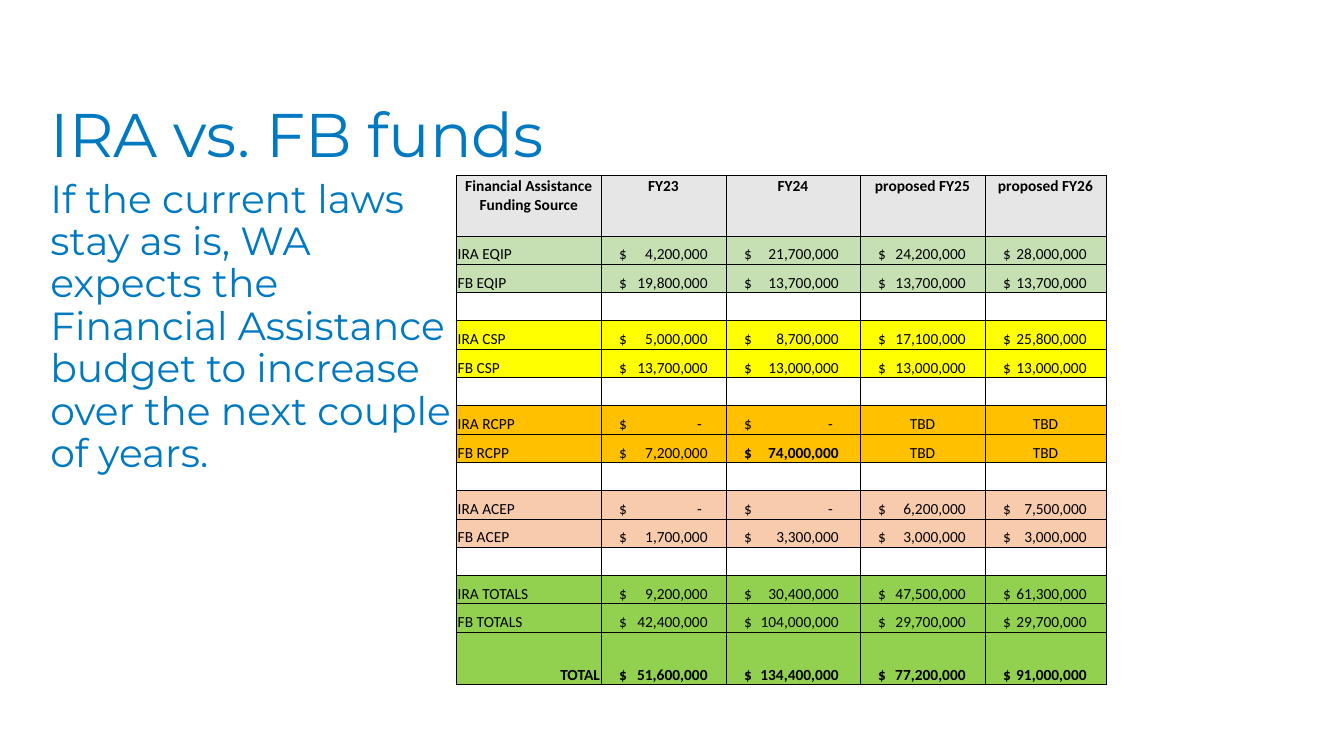
from lxml.etree import SubElement
from pptx import Presentation
from pptx.dml.color import RGBColor
from pptx.enum.text import MSO_ANCHOR as Anchor, MSO_AUTO_SIZE as AutoSize, PP_ALIGN as Align
from pptx.oxml.ns import qn
from pptx.util import Inches, Pt

COLORS = {
    "heading": "0079C1", "ink": "000000", "header": "E7E6E6", "EQIP": "C6E0B4",
    "CSP": "FFFF00", "RCPP": "FFC000", "ACEP": "F8CBAD", "TOTALS": "92D050",
}
YEARS = ["FY23", "FY24", "proposed FY25", "proposed FY26"]
PROGRAMS = {
    "EQIP": ([4_200_000, 21_700_000, 24_200_000, 28_000_000],
             [19_800_000, 13_700_000, 13_700_000, 13_700_000]),
    "CSP": ([5_000_000, 8_700_000, 17_100_000, 25_800_000],
            [13_700_000, 13_000_000, 13_000_000, 13_000_000]),
    "RCPP": ([0, 0, "TBD", "TBD"], [7_200_000, 74_000_000, "TBD", "TBD"]),
    "ACEP": ([0, 0, 6_200_000, 7_500_000], [1_700_000, 3_300_000, 3_000_000, 3_000_000]),
    "TOTALS": ([9_200_000, 30_400_000, 47_500_000, 61_300_000],
               [42_400_000, 104_000_000, 29_700_000, 29_700_000]),
}
GRAND_TOTAL = [51_600_000, 134_400_000, 77_200_000, 91_000_000]
COLUMN_WIDTHS = [1.43, 1.24, 1.33, 1.24, 1.2]
AMOUNT_WIDTHS = [0.88, 0.94, 0.87, 0.83]
TABLE_HEIGHT, HEADER_HEIGHT, TOTAL_HEIGHT = 5.05, 0.6, 0.52


class FundingSlide:
    heading_font = "Montserrat"
    table_font = "Calibri"
    table_size = 11

    def __init__(self, deck):
        self.slide = deck.slides.add_slide(deck.slide_layouts[1])

    def set_font(self, paragraph, face, size, color, bold=False):
        font = paragraph.font
        font.name, font.size, font.bold = face, Pt(size), bold
        font.color.rgb = RGBColor.from_string(COLORS[color])

    def heading(self, index, words, box, size):
        holder = self.slide.placeholders[index]
        holder.left, holder.top, holder.width, holder.height = map(Inches, box)
        frame = holder.text_frame
        frame.text = words
        frame.word_wrap = True
        frame.auto_size = AutoSize.NONE
        frame.vertical_anchor = Anchor.TOP
        paragraph = frame.paragraphs[0]
        paragraph.alignment = Align.LEFT
        paragraph.line_spacing = 0.9
        paragraph.space_before = Pt(0)
        properties = paragraph._p.get_or_add_pPr()
        properties.set("marL", "0")
        properties.set("indent", "0")
        SubElement(properties, qn("a:buNone"))
        self.set_font(paragraph, self.heading_font, size, "heading")

    def table(self, left, top, widths, heights):
        frame = self.slide.shapes.add_table(
            len(heights), len(widths), Inches(left), Inches(top),
            Inches(sum(widths)), Inches(sum(heights)))
        grid = frame.table
        grid.first_row = grid.horz_banding = False
        for column, width in zip(grid.columns, widths):
            column.width = Inches(width)
        for row, height in zip(grid.rows, heights):
            row.height = Inches(height)
        for cell in grid.iter_cells():
            self.blank(cell)
        return grid

    def blank(self, cell):
        cell.margin_left = cell.margin_right = cell.margin_top = Inches(0.01)
        cell.margin_bottom = 0
        for side in ("lnL", "lnR", "lnT", "lnB"):
            border = SubElement(cell._tc.get_or_add_tcPr(), qn(f"a:{side}"), w=str(Pt(0.5)))
            SubElement(SubElement(border, qn("a:solidFill")), qn("a:srgbClr"), val=COLORS["ink"])
        cell.fill.background()
        SubElement(cell.text_frame.paragraphs[0]._p, qn("a:endParaRPr"),
                   sz=str(self.table_size * 100))

    def label(self, cell, words, fill, align=Align.LEFT, bold=False, anchor=Anchor.BOTTOM):
        cell.fill.solid()
        cell.fill.fore_color.rgb = RGBColor.from_string(COLORS[fill])
        cell.vertical_anchor = anchor
        paragraph = cell.text_frame.paragraphs[0]
        paragraph.text = words
        paragraph.alignment = align
        self.set_font(paragraph, self.table_font, self.table_size, "ink", bold)

    def amount(self, cell, value, width, fill, bold):
        if isinstance(value, str):
            self.label(cell, value, fill, Align.CENTER, bold)
            return
        cell.margin_left = Inches(0.18)
        stop = width if value else width - 0.06
        properties = cell.text_frame.paragraphs[0]._p.get_or_add_pPr()
        tabs = SubElement(properties, qn("a:tabLst"))
        SubElement(tabs, qn("a:tab"), pos=str(Inches(stop)), algn="r")
        figure = f"{value:,}" if value else "-"
        self.label(cell, f"$\t{figure}", fill, bold=bold)

    def funding_row(self, grid, row, source, values, fill, align=Align.LEFT, bold=False):
        self.label(grid.cell(row, 0), source, fill, align, bold)
        for column, (value, width) in enumerate(zip(values, AMOUNT_WIDTHS), 1):
            self.amount(grid.cell(row, column), value, width, fill, bold or value == 74_000_000)


def main():
    deck = Presentation()
    deck.slide_width, deck.slide_height = Inches(13.33), Inches(7.5)
    page = FundingSlide(deck)
    page.heading(0, "IRA vs. FB funds", (0.4, 0.98, 11.2, 0.88), 44)
    page.heading(1, "If the current laws stay as is, WA expects the Financial Assistance "
                 "budget to increase over the next couple of years.", (0.4, 1.73, 4.24, 4.95), 28)

    row_count = 3 * len(PROGRAMS) - 1
    row_height = (TABLE_HEIGHT - HEADER_HEIGHT - TOTAL_HEIGHT) / row_count
    heights = [HEADER_HEIGHT] + [row_height] * row_count + [TOTAL_HEIGHT]
    grid = page.table(4.53, 1.74, COLUMN_WIDTHS, heights)
    for column, header in enumerate(["Financial Assistance Funding Source"] + YEARS):
        page.label(grid.cell(0, column), header, "header", Align.CENTER, True, Anchor.TOP)
    for index, (program, funding) in enumerate(PROGRAMS.items()):
        for offset, (law, values) in enumerate(zip(("IRA", "FB"), funding)):
            page.funding_row(grid, 1 + 3 * index + offset, f"{law} {program}", values, program)
    page.funding_row(grid, row_count + 1, "TOTAL", GRAND_TOTAL, "TOTALS", Align.RIGHT, True)
    deck.save("out.pptx")


if __name__ == "__main__":
    main()
